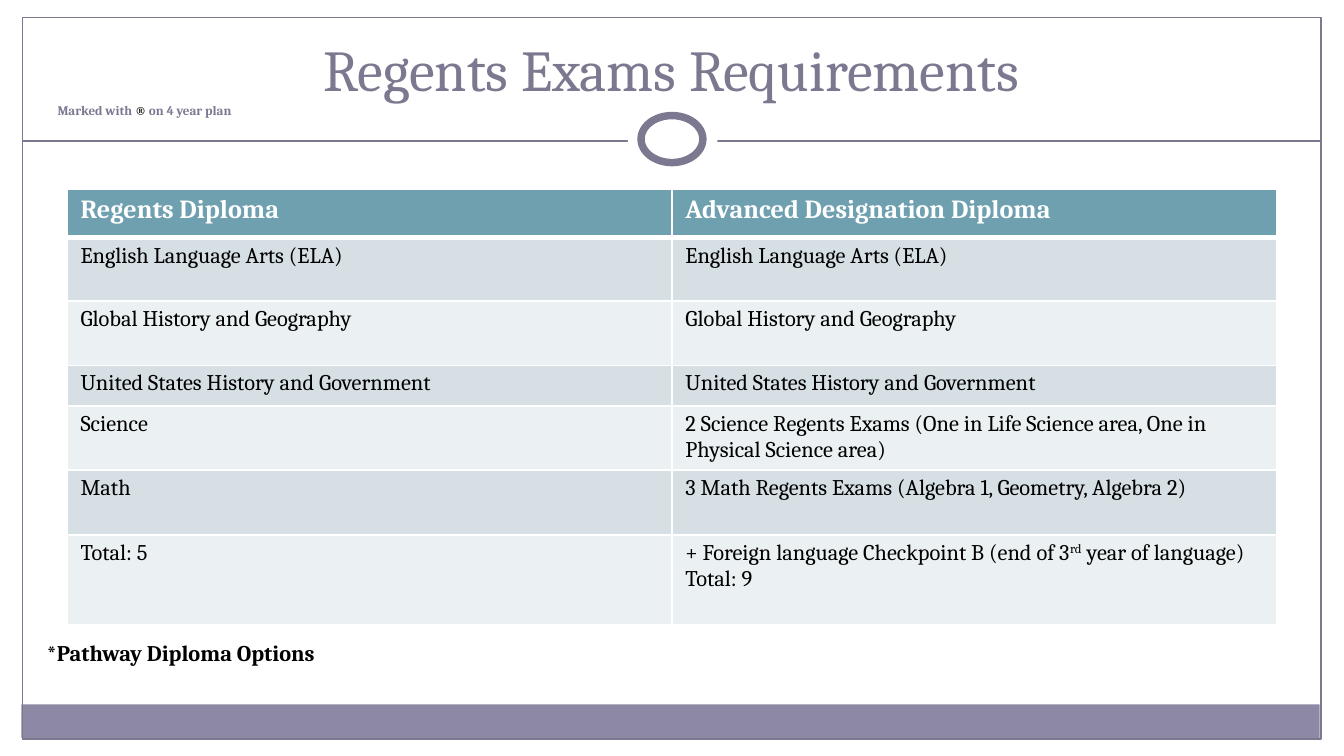
from lxml.etree import SubElement
from pptx import Presentation
from pptx.dml.color import RGBColor
from pptx.enum.shapes import MSO_CONNECTOR as Connector, MSO_SHAPE as Shape
from pptx.enum.text import MSO_ANCHOR as Anchor, PP_ALIGN as Align
from pptx.oxml.ns import qn
from pptx.util import Inches, Pt

COLORS = {
    "white": "FFFFFF",
    "black": "000000",
    "purple": "7B7890",
    "footer": "8D89A4",
    "header": "6EA0B0",
    "odd": "D5DFE4",
    "even": "EBF0F2",
}

DIPLOMA_ROWS = [
    (0.36, "Regents Diploma", "Advanced Designation Diploma"),
    (0.47, "English Language Arts (ELA)", "English Language Arts (ELA)"),
    (0.48, "Global History and Geography", "Global History and Geography"),
    (0.3, "United States History and Government", "United States History and Government"),
    (0.48, "Science", "2 Science Regents Exams (One in Life Science area, One in Physical Science area)"),
    (0.48, "Math", "3 Math Regents Exams (Algebra 1, Geometry, Algebra 2)"),
    (0.67, "Total: 5", "+ Foreign language Checkpoint B (end of 3^rd^ year of language)\nTotal: 9"),
]


class SlideBuilder:
    """Holds the style and the current slide, and adds each kind of element."""

    def __init__(self, slide, font="Cambria"):
        self.slide = slide
        self.font = font

    def color(self, name):
        return RGBColor.from_string(COLORS[name])

    def add_shape(self, kind, box, fill=None, line=None, width=0.75):
        shape = self.slide.shapes.add_shape(kind, *map(Inches, box))
        shape.shadow.inherit = False
        if fill:
            shape.fill.solid()
            shape.fill.fore_color.rgb = self.color(fill)
        else:
            shape.fill.background()
        if line:
            shape.line.color.rgb = self.color(line)
            shape.line.width = Pt(width)
        else:
            shape.line.fill.background()

    def add_line(self, start, end, color, width=0.75):
        line = self.slide.shapes.add_connector(Connector.STRAIGHT, *map(Inches, start + end))
        line.line.color.rgb = self.color(color)
        line.line.width = Pt(width)
        SubElement(line._element.spPr, qn("a:effectLst"))

    def add_run(self, paragraph, text, size, color, bold=False, raised=False):
        run = paragraph.add_run()
        run.text = text
        run.font.name = self.font
        run.font.size = Pt(size)
        run.font.bold = bold
        run.font.color.rgb = self.color(color)
        if raised:
            run.font._element.set("baseline", "30000")

    def add_text(self, box, paragraphs, anchor=Anchor.TOP):
        frame = self.slide.shapes.add_textbox(*map(Inches, box)).text_frame
        frame.word_wrap = True
        frame.vertical_anchor = anchor
        for index, (align, runs) in enumerate(paragraphs):
            paragraph = frame.add_paragraph() if index else frame.paragraphs[0]
            paragraph.alignment = align
            for run in runs:
                self.add_run(paragraph, *run)

    def add_borders(self, cell, top, bottom):
        properties = cell._tc.get_or_add_tcPr()
        for side, width in (("L", 1), ("R", 1), ("T", top), ("B", bottom)):
            border = SubElement(properties, qn(f"a:ln{side}"), w=str(Pt(width)))
            fill = SubElement(border, qn("a:solidFill"))
            SubElement(fill, qn("a:srgbClr"), val=COLORS["white"])

    def fill_cell(self, cell, text, row):
        header = row == 0
        size, color = (14, "white") if header else (12, "black")
        cell.margin_top = cell.margin_bottom = Inches(0.04)
        self.add_borders(cell, 3 if row == 1 else 1, 3 if header else 1)
        cell.fill.solid()
        cell.fill.fore_color.rgb = self.color("header" if header else "odd" if row % 2 else "even")
        for index, line in enumerate(text.split("\n")):
            paragraph = cell.text_frame.add_paragraph() if index else cell.text_frame.paragraphs[0]
            for part, piece in enumerate(line.split("^")):
                self.add_run(paragraph, piece, size, color, header, part % 2 == 1)

    def add_table(self, box, rows):
        table = self.slide.shapes.add_table(len(rows), 2, *map(Inches, box)).table
        for row, (height, *texts) in enumerate(rows):
            table.rows[row].height = Inches(height)
            for column, text in enumerate(texts):
                self.fill_cell(table.cell(row, column), text, row)


def main():
    presentation = Presentation()
    presentation.slide_width = Inches(10)
    presentation.slide_height = Inches(10 * 9 / 16)
    builder = SlideBuilder(presentation.slides.add_slide(presentation.slide_layouts[6]))

    builder.add_shape(Shape.RECTANGLE, (0.16, 5.24, 9.66, 0.25), fill="footer")
    builder.add_shape(Shape.RECTANGLE, (0.17, 0.13, 9.66, 5.37), line="purple")
    builder.add_line((0.17, 1.05), (9.83, 1.05), "purple")
    builder.add_shape(Shape.OVAL, (4.67, 0.78, 0.67, 0.5), fill="white")
    builder.add_shape(Shape.OVAL, (4.77, 0.86, 0.46, 0.35), "white", "purple", 4)
    builder.add_table((0.5, 1.41, 9, 3.24), DIPLOMA_ROWS)
    builder.add_text((0.25, 4.71, 8.58, 0.54), [
        (Align.LEFT, [("*Pathway Diploma Options", 12, "black", True)]),
    ])
    builder.add_text((0.33, 0.31, 9.33, 0.62), [
        (Align.CENTER, [("Regents Exams Requirements", 31, "purple")]),
        (Align.LEFT, [
            ("Marked with ", 7, "purple", True),
            ("®", 7, "black", True),
            (" on 4 year plan", 7, "purple", True),
        ]),
    ], Anchor.BOTTOM)
    presentation.save("out.pptx")


if __name__ == "__main__":
    main()
